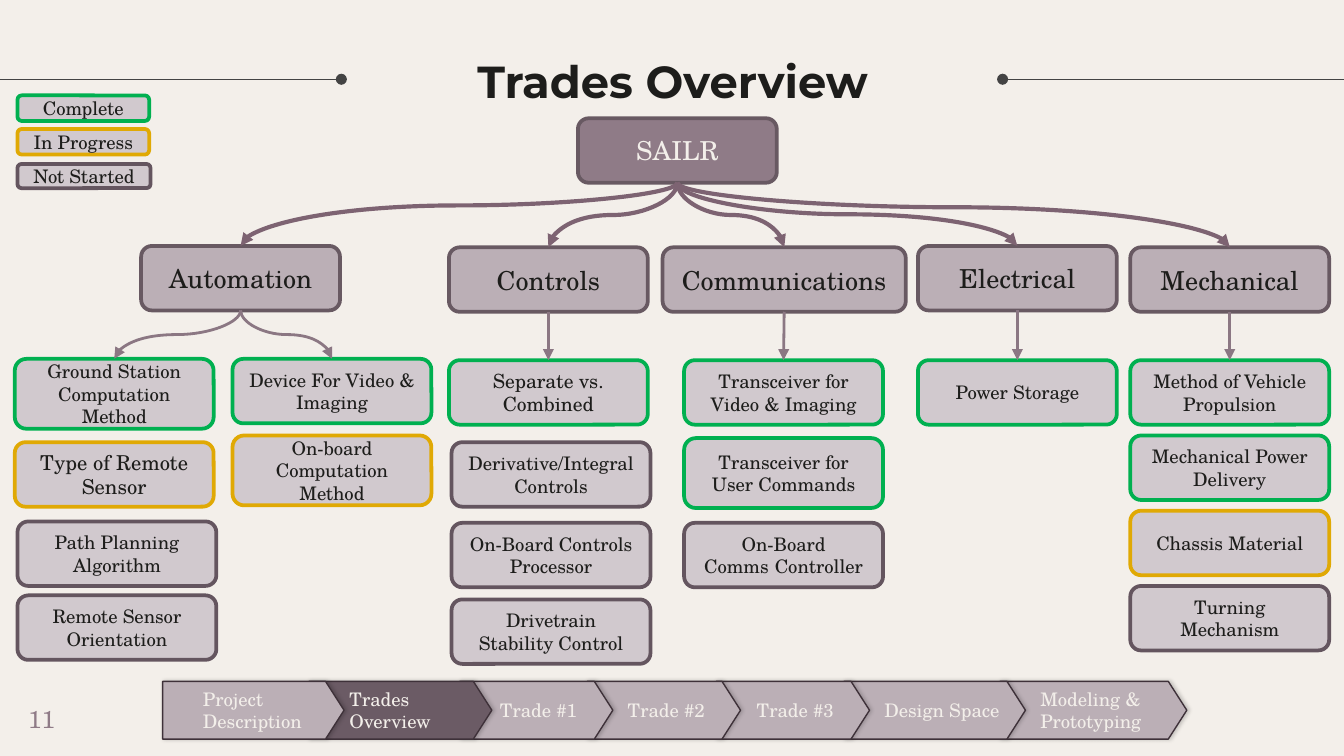
from lxml.etree import SubElement
from pptx import Presentation
from pptx.dml.color import RGBColor
from pptx.enum.shapes import MSO_CONNECTOR as CXN, MSO_SHAPE as SHAPE
from pptx.enum.text import MSO_ANCHOR as ANCHOR, PP_ALIGN as ALIGN
from pptx.oxml.ns import qn
from pptx.util import Inches, Pt

SERIF, SANS = "TeX Gyre Schola", "Montserrat"
NBSP = chr(160)
C = {
    "bg": "F3EFEA", "ink": "1D1D1B", "rule": "434343", "root": "8F7B87",
    "branch": "BBAFB6", "leaf": "D1C9CE", "frame": "685962",
    "done": "00B050", "doing": "E0A904", "todo": "64555F",
    "curve": "7D6372", "link": "8B7783",
    "nav": "BBAFB6", "current": "6B5B65", "nav_line": "3E3139",
}
BOX_W, BOX_H, TALL_H = 1.48, 0.48, 0.52
ROOT = ("SAILR", 4.3, 0.88)

# status, label, left, top, width, height
LEGEND = [
    ("done", "Complete", 0.13, 0.71, 0.98, 0.19),
    ("doing", "In Progress", 0.13, 0.96, 0.98, 0.19),
    ("todo", "Not Started", 0.13, 1.22, 0.99, 0.18),
]

# Each branch: name, left, top, width, bend of the curve from the root, and
# columns of trades: (status, label, left, top[, format])
BRANCHES = [
    ("Automation", 1.05, 1.83, BOX_W, 0.36, [
        [("done", "Ground Station Computation Method", 0.11, 2.67, {"h": TALL_H}),
         ("doing", "Type of Remote Sensor", 0.11, 3.29, {"size": 11}),
         ("todo", "Path Planning Algorithm", 0.13, 3.88),
         ("todo", "Remote Sensor Orientation", 0.13, 4.43)],
        [("done", "Device For Video & Imaging", 1.73, 2.67),
         ("doing", "On-board Computation Method", 1.73, 3.24, {"h": TALL_H})],
    ]),
    ("Controls", 3.34, 1.84, BOX_W, 0.5, [
        [("done", "Separate vs. Combined", 3.34, 2.68, {"size": 10.5}),
         ("todo", "Derivative/Integral Controls", 3.36, 3.29),
         ("todo", "On-Board Controls Processor", 3.36, 3.89),
         ("todo", "Drivetrain Stability Control", 3.36, 4.46)],
    ]),
    ("Communications", 4.93, 1.84, 1.81, 0.5, [
        [("done", "Transceiver for Video & Imaging", 5.09, 2.68),
         ("done", "Transceiver for User Commands", 5.09, 3.26, {"h": TALL_H}),
         ("todo", f"On-Board Comms{NBSP}Controller", 5.09, 3.89)],
    ]),
    ("Electrical", 6.83, 1.83, BOX_W, 0.5, [
        [("done", "Power Storage", 6.83, 2.68)],
    ]),
    ("Mechanical", 8.41, 1.84, BOX_W, 0.38, [
        [("done", "Method of Vehicle Propulsion", 8.41, 2.68),
         ("done", "Mechanical Power Delivery", 8.41, 3.24),
         ("doing", "Chassis Material", 8.41, 3.8),
         ("todo", "Turning Mechanism", 8.41, 4.36)],
    ]),
]

NAV_TOP, NAV_H, CURRENT = 5.07, 0.43, "Trades Overview"
NAV = [  # label, left, width
    ("Project Description", 1.21, 1.35), ("Trades Overview", 2.3, 1.36),
    ("Trade #1", 3.42, 1.14), ("Trade #2", 4.37, 1.14),
    ("Trade #3", 5.33, 1.14), ("Design Space", 6.28, 1.35),
    ("Modeling & Prototyping", 7.44, 1.39),
]

prs = Presentation()
prs.slide_width = Inches(10)
prs.slide_height = prs.slide_width * 9 // 16
s = prs.slides.add_slide(prs.slide_layouts[6])


def rgb(name):
    return RGBColor.from_string(C[name])


s.background.fill.solid()
s.background.fill.fore_color.rgb = rgb("bg")


def write(sp, text, size=10, color="ink", font=SERIF, bold=False,
          align=ALIGN.CENTER, anchor=ANCHOR.MIDDLE, ins=(0.1, 0.05, 0.1, 0.05)):
    tf = sp.text_frame
    tf.word_wrap = True
    tf.vertical_anchor = anchor
    tf.margin_left, tf.margin_top, tf.margin_right, tf.margin_bottom = map(Inches, ins)
    p = tf.paragraphs[0]
    p.alignment = align
    r = p.add_run()
    r.text = text
    r.font.size, r.font.name, r.font.bold = Pt(size), font, bold
    r.font.color.rgb = rgb(color)


def text_box(text, x, y, w, h, **fmt):
    sp = s.shapes.add_textbox(*map(Inches, (x, y, w, h)))
    write(sp, text, ins=(0.1,) * 4, **fmt)


def shape(kind, x, y, w, h, fill, line, width):
    sp = s.shapes.add_shape(kind, *map(Inches, (x, y, w, h)))
    sp.shadow.inherit = False
    sp.fill.solid()
    sp.fill.fore_color.rgb = rgb(fill)
    sp.line.color.rgb = rgb(line)
    sp.line.width = Pt(width)
    return sp


def box(text, x, y, w=BOX_W, h=BOX_H, fill="leaf", line="frame", **fmt):
    sp = shape(SHAPE.ROUNDED_RECTANGLE, x, y, w, h, fill, line, 2)
    write(sp, text, **fmt)
    return sp


def connector(kind, x1, y1, x2, y2, color, width, **ends):
    """Line whose ends maps headEnd or tailEnd to an arrowhead type."""
    c = s.shapes.add_connector(kind, *map(Inches, (x1, y1, x2, y2)))
    c.line.color.rgb = rgb(color)
    c.line.width = Pt(width)
    ln = c._element.spPr.find(qn("a:ln"))
    for tag, style in ends.items():
        SubElement(ln, qn("a:" + tag), type=style)
    SubElement(c._element.spPr, qn("a:effectLst"))
    return c


def curve_down(start, end, color, width, bend=0.5):
    """Curved arrow from one box's bottom to another's top, leaving vertically."""
    x1, y1 = start.left + start.width // 2, start.top + start.height
    x2, y2 = end.left + end.width // 2, end.top
    c = connector(CXN.CURVE, 0, 0, 1, 1, color, width, tailEnd="triangle")
    c.width, c.height = y2 - y1, abs(x2 - x1)
    c.left = (x1 + x2 - c.width) // 2
    c.top = (y1 + y2 - c.height) // 2
    spPr = c._element.spPr
    xfrm = spPr.find(qn("a:xfrm"))
    xfrm.set("rot", str((90 if x2 < x1 else 270) * 60000))
    if x2 > x1:
        xfrm.set("flipH", "1")
    guides = spPr.find(qn("a:prstGeom")).get_or_add_avLst()
    SubElement(guides, qn("a:gd"), name="adj1", fmla=f"val {round(bend * 100000)}")


def straight_down(start, end):
    c = connector(CXN.STRAIGHT, 0, 0, 1, 1, "link", 1.5, tailEnd="triangle")
    c.begin_connect(start, 2)
    c.end_connect(end, 0)


def chevron(label, x, w):
    fill = "current" if label == CURRENT else "nav"
    sp = shape(SHAPE.PENTAGON, x, NAV_TOP, w, NAV_H, fill, "nav_line", 0.75)
    sp.adjustments[0] = 0.32
    effects = sp._element.spPr.find(qn("a:effectLst"))
    shadow = SubElement(effects, qn("a:outerShdw"), blurRad=str(Pt(2.2)),
                        dist=str(Pt(0.8)), dir="0", algn="l", rotWithShape="0")
    black = SubElement(shadow, qn("a:srgbClr"), val="000000")
    SubElement(black, qn("a:alpha"), val="20000")
    write(sp, label, color="bg", align=ALIGN.LEFT, ins=(0.3, 0, 0, 0))


for inner, outer in ((2.54, -0.03), (7.46, 10.01)):
    connector(CXN.STRAIGHT, inner, 0.59, outer, 0.59, "rule", 0.75, headEnd="oval")
text_box("11", 0.01, 5.14, 0.6, 0.43, size=13, color="root", anchor=ANCHOR.TOP)
text_box("Trades Overview", 2.54, 0.13, 4.93, 0.94, size=24, font=SANS, bold=True)

for status, label, *place in LEGEND:
    box(label, *place, line=status)

root = box(*ROOT, fill="root", size=14, color="bg")
for name, x, y, w, bend, columns in BRANCHES:
    branch = box(name, x, y, w, fill="branch", size=14)
    curve_down(root, branch, "curve", 2.25, bend)
    for column in columns:
        trades = [box(label, left, top, line=status, **(fmt[0] if fmt else {}))
                  for status, label, left, top, *fmt in column]
        if len(columns) > 1:
            curve_down(branch, trades[0], "link", 1.5)
        else:
            straight_down(branch, trades[0])

for step in reversed(NAV):
    chevron(*step)

prs.save("out.pptx")
